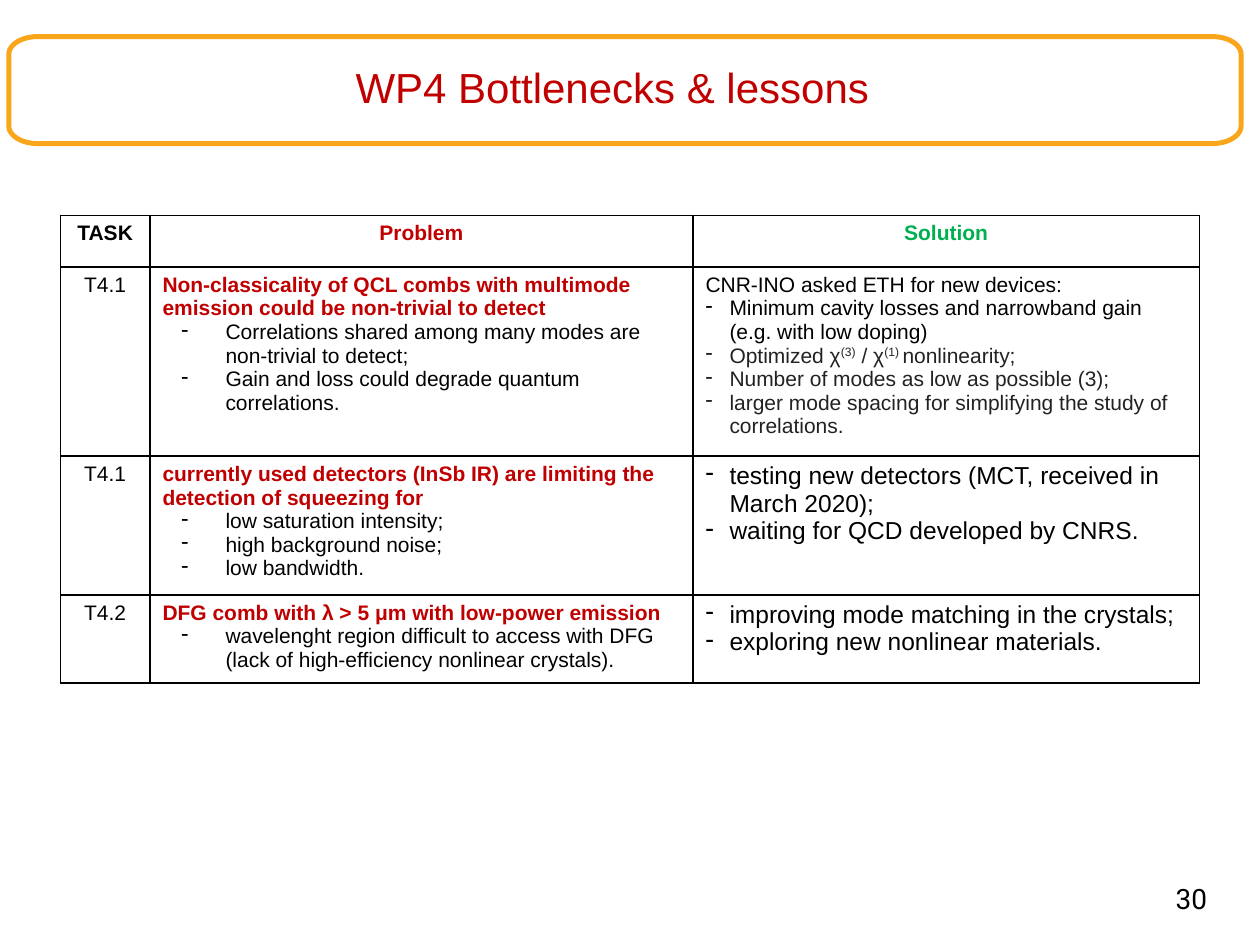
import math

from lxml import etree
from pptx import Presentation
from pptx.dml.color import RGBColor
from pptx.enum.text import MSO_ANCHOR, PP_ALIGN
from pptx.oxml.ns import qn
from pptx.util import Inches, Pt

CENTER, LEFT, RIGHT = PP_ALIGN.CENTER, PP_ALIGN.LEFT, PP_ALIGN.RIGHT
TOP, MIDDLE = MSO_ANCHOR.TOP, MSO_ANCHOR.MIDDLE

COLORS = {
    "black": "000000",
    "grey": "222222",
    "red": "C00000",
    "green": "00B050",
    "orange": "FAA61A",
}

# Paragraph styles: size, colour, bold, alignment, (left margin, hanging indent)
STYLES = {
    "task_head": (12, "black", True, CENTER, None),
    "problem_head": (12, "red", True, CENTER, None),
    "solution_head": (12, "green", True, CENTER, None),
    "task": (12, "black", False, CENTER, None),
    "problem": (12, "red", True, LEFT, None),
    "reason": (12, "black", False, LEFT, (0.5, 0.35)),
    "intro": (12, "black", False, LEFT, None),
    "step": (12, "black", False, LEFT, (0.19, 0.19)),
    "grey_step": (12, "grey", False, LEFT, (0.19, 0.19)),
    "large_step": (14, "black", False, LEFT, (0.19, 0.19)),
}

COLUMN_WIDTHS = [0.71, 4.31, 4.02]
ROW_HEIGHTS = [0.41, 1.5, 1.1, 0.7]

# Each cell is a list of (style, text); text between ^ marks is superscript
ROWS = [
    [
        [("task_head", "TASK")],
        [("problem_head", "Problem")],
        [("solution_head", "Solution")],
    ],
    [
        [("task", "T4.1")],
        [
            ("problem", "Non-classicality of QCL combs with multimode emission "
                        "could be non-trivial to detect"),
            ("reason", "Correlations shared among many modes are non-trivial to detect;"),
            ("reason", "Gain and loss could degrade quantum correlations."),
        ],
        [
            ("intro", "CNR-INO asked ETH for new devices:"),
            ("step", "Minimum cavity losses and narrowband gain (e.g. with low doping)"),
            ("grey_step", "Optimized χ^(3)^ / χ^(1) ^nonlinearity;"),
            ("grey_step", "Number of modes as low as possible (3);"),
            ("grey_step", "larger mode spacing for simplifying the study of correlations."),
        ],
    ],
    [
        [("task", "T4.1")],
        [
            ("problem", "currently used detectors (InSb IR) are limiting the "
                        "detection of squeezing for"),
            ("reason", "low saturation intensity;"),
            ("reason", "high background noise;"),
            ("reason", "low bandwidth."),
        ],
        [
            ("large_step", "testing new detectors (MCT, received in March 2020);"),
            ("large_step", "waiting for QCD developed by CNRS."),
        ],
    ],
    [
        [("task", "T4.2")],
        [
            ("problem", "DFG comb with λ > 5 μm with low-power emission"),
            ("reason", "wavelenght region difficult to access with DFG "
                       "(lack of high-efficiency nonlinear crystals)."),
        ],
        [
            ("large_step", "improving mode matching in the crystals;"),
            ("large_step", "exploring new nonlinear materials."),
        ],
    ],
]


def color(name):
    return RGBColor.from_string(COLORS[name])


def format_font(font, name, size, color_name, bold=False):
    font.name = name
    font.size = Pt(size)
    font.bold = bold
    font.color.rgb = color(color_name)


def add_label(slide, box, text, font, size, color_name, alignment, anchor, inset):
    text_box = slide.shapes.add_textbox(*map(Inches, box))
    frame = text_box.text_frame
    frame.word_wrap = True
    frame.vertical_anchor = anchor
    frame.margin_left = frame.margin_right = Inches(inset)
    frame.margin_top = frame.margin_bottom = Inches(inset)
    frame.text = text
    paragraph = frame.paragraphs[0]
    paragraph.alignment = alignment
    format_font(paragraph.runs[0].font, font, size, color_name)
    return paragraph


def add_title_frame(slide, box):
    """Outline with elliptical corners, traced clockwise from the left edge."""
    left, top, width, height = box
    radius_x, radius_y, steps = 0.23, 0.14, 12
    left_x, right_x = left + radius_x, left + width - radius_x
    top_y, bottom_y = top + radius_y, top + height - radius_y
    centers = [(left_x, top_y), (right_x, top_y), (right_x, bottom_y), (left_x, bottom_y)]
    points = []
    for corner, (x, y) in enumerate(centers):
        for step in range(steps + 1):
            angle = math.pi + (corner + step / steps) * math.pi / 2
            points.append((Inches(x + radius_x * math.cos(angle)),
                           Inches(y + radius_y * math.sin(angle))))
    builder = slide.shapes.build_freeform(*points[0])
    builder.add_line_segments(points[1:], close=True)
    shape = builder.convert_to_shape()
    shape.shadow.inherit = False
    shape.fill.background()
    shape.line.color.rgb = color("orange")
    shape.line.width = Pt(2.83)


def add_title(slide, box):
    left, top, width, height = box
    add_title_frame(slide, box)
    title_box = (left + 1.68, top + 0.24, 6.22, 0.36)
    paragraph = add_label(slide, title_box, "WP4 Bottlenecks & lessons",
                          "Arial", 24, "red", CENTER, MIDDLE, 0)
    paragraph.line_spacing = 0.9


def set_bullet(paragraph, margin, hanging):
    properties = paragraph._p.get_or_add_pPr()
    properties.set("marL", str(Inches(margin)))
    properties.set("indent", str(-Inches(hanging)))
    etree.SubElement(properties, qn("a:buChar"), char="-")


def set_borders(cell):
    properties = cell._tc.get_or_add_tcPr()
    for side in ("lnL", "lnR", "lnT", "lnB"):
        line = etree.SubElement(properties, qn(f"a:{side}"), w=str(Pt(1)))
        fill = etree.SubElement(line, qn("a:solidFill"))
        etree.SubElement(fill, qn("a:srgbClr"), val=COLORS["black"])


def fill_cell(cell, content):
    set_borders(cell)
    cell.fill.background()
    frame = cell.text_frame
    for index, (style, text) in enumerate(content):
        size, color_name, bold, alignment, indent = STYLES[style]
        paragraph = frame.add_paragraph() if index else frame.paragraphs[0]
        paragraph.alignment = alignment
        if indent:
            set_bullet(paragraph, *indent)
        for part_index, part in enumerate(text.split("^")):
            run = paragraph.add_run()
            run.text = part
            format_font(run.font, "Arial", size, color_name, bold)
            if part_index % 2:
                run._r.get_or_add_rPr().set("baseline", "30000")


def add_task_table(slide, box):
    frame = slide.shapes.add_table(len(ROWS), len(COLUMN_WIDTHS), *map(Inches, box))
    table = frame.table
    table.first_row = table.horz_banding = False
    for column, width in zip(table.columns, COLUMN_WIDTHS):
        column.width = Inches(width)
    for row, height, contents in zip(table.rows, ROW_HEIGHTS, ROWS):
        row.height = Inches(height)
        for cell, content in zip(row.cells, contents):
            fill_cell(cell, content)


def main():
    presentation = Presentation()
    presentation.slide_width, presentation.slide_height = Inches(10), Inches(7.5)
    slide = presentation.slides.add_slide(presentation.slide_layouts[6])
    add_title(slide, (0.07, 0.29, 9.78, 0.85))
    add_task_table(slide, (0.48, 1.71, sum(COLUMN_WIDTHS), sum(ROW_HEIGHTS)))
    # Slide number
    add_label(slide, (7.3, 6.95, 2.33, 0.4), "30", "Roboto", 16, "black", RIGHT, TOP, 0.05)
    presentation.save("out.pptx")


if __name__ == "__main__":
    main()
